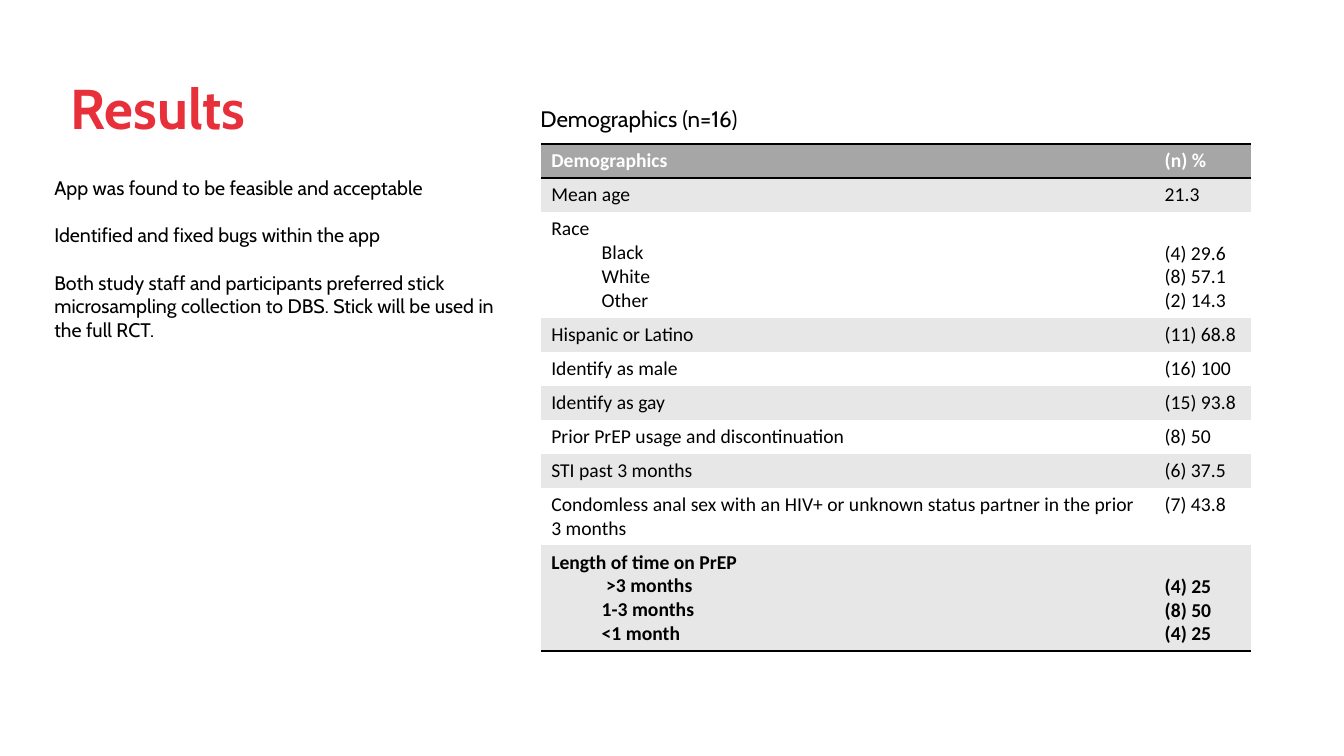
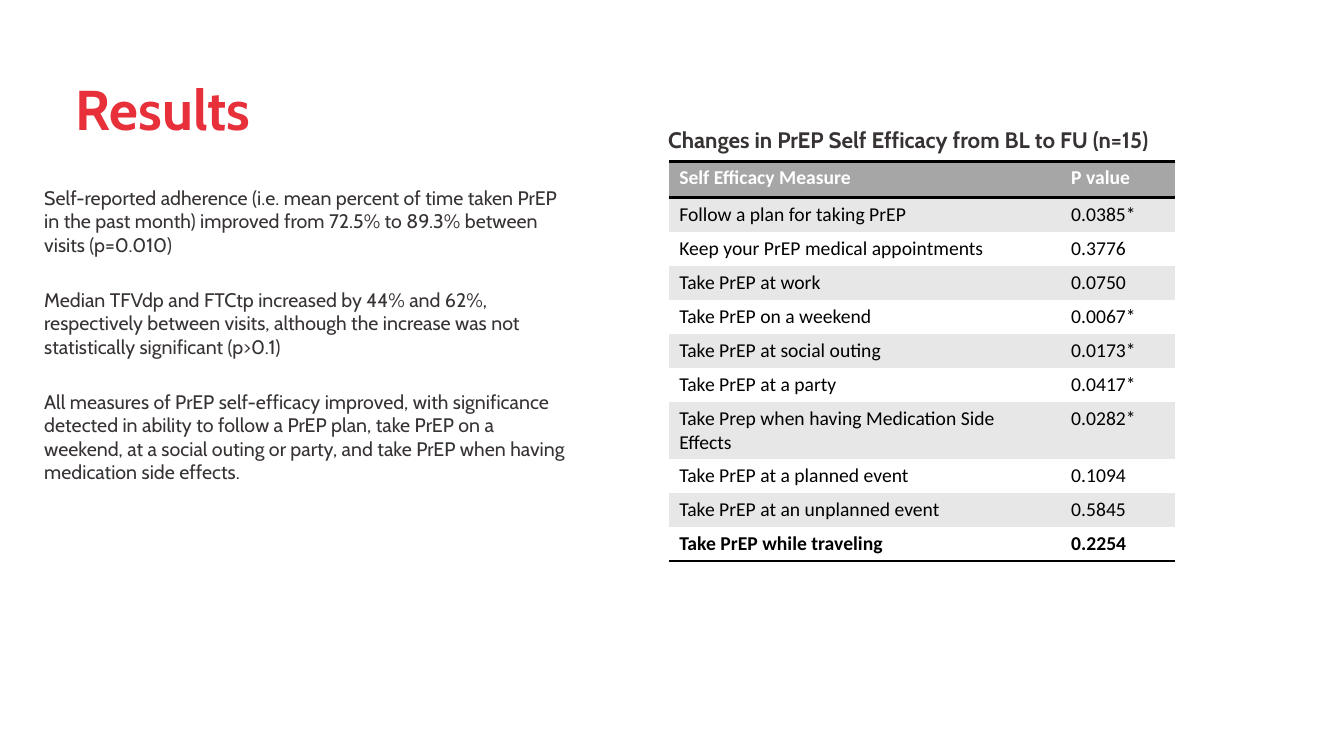
from pptx import Presentation
from pptx.dml.color import RGBColor as Rgb
from pptx.enum.text import MSO_ANCHOR as Anchor, MSO_AUTO_SIZE as Fit, PP_ALIGN as Align
from pptx.oxml import parse_xml
from pptx.oxml.ns import nsdecls
from pptx.util import Pt

HEX = {"red": "E8303B", "black": "000000", "dark": "383333", "white": "FFFFFF",
       "head": "A6A6A6", "band": "E7E7E7"}
HEAD, BODY = "Cabin", "Calibri"
PLAIN = "{2D5ABB26-0587-4C30-8999-92F81FD0307C}"
LINE, PAD = 17.1, 7.2

SLIDES = [
    {
        "title": (24, 31, 178, 91.5),
        "ink": "black",
        "gap": 16.8,
        "notes": [
            "App was found to be feasible and acceptable",
            "Identified and fixed bugs within the app",
            "Both study staff and participants preferred stick microsampling "
            "collection to DBS. Stick will be used in the full RCT.",
        ],
        "notes_at": (31.7, 122.4, 348, 160),
        "caption": "Demographics (n=16)",
        "caption_at": (379, 71.3, 360, 26.6),
        "bold": False,
        "table_at": (386.6, 103),
        "cols": (438.2, 69),
        "top": 24.3,
        "rows": [
            ("Demographics", "(n) %"),
            ("Mean age", "21.3"),
            ("Race\nBlack\nWhite\nOther", "(4) 29.6\n(8) 57.1\n(2) 14.3"),
            ("Hispanic or Latino", "(11) 68.8"),
            ("Identify as male", "(16) 100"),
            ("Identify as gay", "(15) 93.8"),
            ("Prior PrEP usage and discontinuation", "(8) 50"),
            ("STI past 3 months", "(6) 37.5"),
            ("Condomless anal sex with an HIV+ or unknown status partner "
             "in the prior 3 months", "(7) 43.8"),
            ("Length of time on PrEP\n >3 months\n1-3 months\n<1 month",
             "(4) 25\n(8) 50\n(4) 25"),
        ],
    },
    {
        "title": (18, 31.7, 197.3, 91.5),
        "ink": "dark",
        "gap": 22.5,
        "notes": [
            "Self-reported adherence (i.e. mean percent of time taken PrEP in the "
            "past month) improved from 72.5% to 89.3% between visits (p=0.010)",
            "Median TFVdp and FTCtp increased by 44% and 62%, respectively between "
            "visits, although the increase was not statistically significant (p>0.1)",
            "All measures of PrEP self-efficacy improved, with significance detected "
            "in ability to follow a PrEP plan, take PrEP on a weekend, at a social "
            "outing or party, and take PrEP when having medication side effects.",
        ],
        "notes_at": (24.5, 129, 394.6, 356.4),
        "caption": "Changes in PrEP Self Efficacy from BL to FU (n=15)",
        "caption_at": (470.2, 86.4, 394.6, 31),
        "bold": True,
        "table_at": (478, 115.2),
        "cols": (280, 81.4),
        "top": 26,
        "rows": [
            ("Self Efficacy Measure", "P value"),
            ("Follow a plan for taking PrEP", "0.0385*"),
            ("Keep your PrEP medical appointments", "0.3776"),
            ("Take PrEP at work", "0.0750"),
            ("Take PrEP on a weekend", "0.0067*"),
            ("Take PrEP at social outing", "0.0173*"),
            ("Take PrEP at a party", "0.0417*"),
            ("Take Prep when having Medication Side Effects", "0.0282*"),
            ("Take PrEP at a planned event", "0.1094"),
            ("Take PrEP at an unplanned event", "0.5845"),
            ("Take PrEP while traveling", "0.2254"),
        ],
    },
]


def color(name):
    return Rgb.from_string(HEX[name])


def style(para, face, size, ink, bold=False):
    font = para.font
    font.name, font.size, font.bold = face, Pt(size), bold
    font.color.rgb = color(ink)


def add_title(slide, box):
    shape = slide.shapes.title
    shape.left, shape.top, shape.width, shape.height = map(Pt, box)
    frame = shape.text_frame
    frame.text = "Results"
    frame.auto_size = Fit.NONE
    frame.vertical_anchor = Anchor.MIDDLE
    para = frame.paragraphs[0]
    para.alignment = Align.CENTER
    style(para, HEAD, 40, "red", True)


def add_text(slide, box, lines, size, ink, bold=False, gap=0):
    frame = slide.shapes.add_textbox(*map(Pt, box)).text_frame
    frame.word_wrap = True
    frame.text = "\n".join(lines)
    for i, para in enumerate(frame.paragraphs):
        if i:
            para.space_before = Pt(gap)
        style(para, HEAD, size, ink, bold)


def add_rule(cell, side):
    cell._tc.get_or_add_tcPr().append(parse_xml(
        f'<a:{side} {nsdecls("a")} w="{Pt(2)}"><a:solidFill>'
        f'<a:srgbClr val="{HEX["black"]}"/></a:solidFill></a:{side}>'))


def fill_cell(cell, text, row, last):
    if row == 0:
        add_rule(cell, "lnT")
    if row in (0, last):
        add_rule(cell, "lnB")
    fill = "head" if row == 0 else "band" if row % 2 else "white"
    cell.fill.solid()
    cell.fill.fore_color.rgb = color(fill)
    cell.text = text
    for para in cell.text_frame.paragraphs:
        style(para, BODY, 14, "black" if row else "white", row in (0, last))


def add_grid(slide, data):
    rows, cols = data["rows"], data["cols"]
    left, top = data["table_at"]
    frame = slide.shapes.add_table(len(rows), len(cols), Pt(left), Pt(top),
                                   Pt(sum(cols)), Pt(data["top"] * len(rows)))
    table = frame.table
    table._tbl.tblPr[0].text = PLAIN
    for col, width in zip(table.columns, cols):
        col.width = Pt(width)
    for r, texts in enumerate(rows):
        count = texts[0].count("\n") + 1
        table.rows[r].height = Pt(LINE * count + PAD if r else data["top"])
        for c, text in enumerate(texts):
            fill_cell(table.cell(r, c), text, r, len(rows) - 1)
        if count > 1:
            table.cell(r, 1).vertical_anchor = Anchor.BOTTOM
            for para in table.cell(r, 0).text_frame.paragraphs[1:]:
                para._p.get_or_add_pPr().set("marL", str(Pt(36)))


def main():
    deck = Presentation()
    deck.slide_width, deck.slide_height = Pt(960), Pt(540)
    for data in SLIDES:
        slide = deck.slides.add_slide(deck.slide_layouts[5])
        add_title(slide, data["title"])
        add_text(slide, data["notes_at"], data["notes"], 14, data["ink"], gap=data["gap"])
        add_text(slide, data["caption_at"], [data["caption"]], 16, data["ink"], data["bold"])
        add_grid(slide, data)
    deck.save("out.pptx")


if __name__ == "__main__":
    main()
